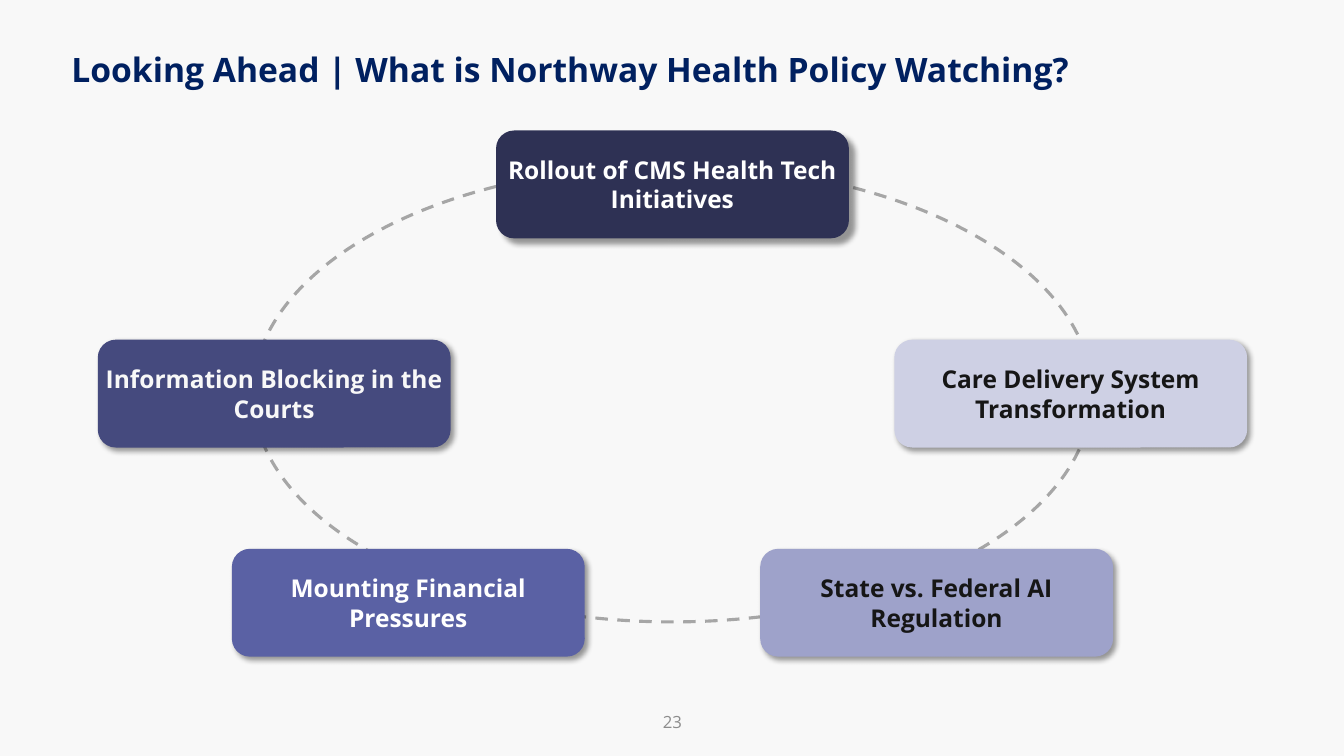
from lxml import etree
from pptx import Presentation
from pptx.dml.color import RGBColor
from pptx.enum.dml import MSO_LINE
from pptx.enum.shapes import MSO_SHAPE as SHAPE
from pptx.enum.text import MSO_ANCHOR as ANCHOR, PP_ALIGN as ALIGN
from pptx.oxml.ns import qn
from pptx.util import Inches, Pt

FONT = "Open Sans"
PAPER = RGBColor(0xF8, 0xF8, 0xF8)
NAVY = RGBColor(0x00, 0x20, 0x60)
GRAY = RGBColor(0x8C, 0x8C, 0x8C)
RING = RGBColor(0xA6, 0xA6, 0xA6)
WHITE = RGBColor(0xFF, 0xFF, 0xFF)
INK = RGBColor(0x16, 0x16, 0x16)
INDIGO_1 = RGBColor(0x2E, 0x31, 0x54)
INDIGO_2 = RGBColor(0x45, 0x4A, 0x7E)
INDIGO_3 = RGBColor(0x5A, 0x61, 0xA4)
INDIGO_4 = RGBColor(0x9E, 0xA2, 0xCA)
INDIGO_5 = RGBColor(0xCE, 0xD0, 0xE4)

CARD_W, CARD_H = 3.5, 1.07
ROW_STEP = 2.075

# Text, fill, text colour, offset from the ring's centre, row, shadow distance, space after
TOPICS = [
    ("Information Blocking in the Courts", INDIGO_2, PAPER, -3.95, 1, 3, 0),
    ("Rollout of CMS Health Tech Initiatives", INDIGO_1, WHITE, 0, 0, 6, 0),
    ("Mounting Financial Pressures", INDIGO_3, WHITE, -2.62, 2, 3, 0),
    ("State vs. Federal AI Regulation", INDIGO_4, INK, 2.62, 2, 3, 6),
    ("Care Delivery System Transformation", INDIGO_5, INK, 3.95, 1, 3, 6),
]


def write(tf, text, size, color, bold=False, align=ALIGN.LEFT):
    tf.word_wrap = True
    p = tf.paragraphs[0]
    p.alignment = align
    r = p.add_run()
    r.text = text
    r.font.name = FONT
    r.font.size = Pt(size)
    r.font.bold = bold
    r.font.color.rgb = color
    return p


def add_shadow(sp, distance):
    sp.shadow.inherit = False
    effects = sp.element.spPr.find(qn("a:effectLst"))
    shadow = etree.SubElement(
        effects, qn("a:outerShdw"), blurRad=str(Pt(4)), dist=str(Pt(distance)),
        dir=str(45 * 60000), algn="tl", rotWithShape="0")
    color = etree.SubElement(shadow, qn("a:srgbClr"), val="000000")
    etree.SubElement(color, qn("a:alpha"), val="40000")


def add_label(s, x, y, w, h, text, size, color, bold=False,
              align=ALIGN.LEFT, anchor=ANCHOR.TOP):
    tf = s.shapes.add_textbox(Inches(x), Inches(y), Inches(w), Inches(h)).text_frame
    tf.vertical_anchor = anchor
    write(tf, text, size, color, bold, align)


def add_card(s, x, y, text, fill, color, distance, space_after):
    sp = s.shapes.add_shape(SHAPE.ROUNDED_RECTANGLE, Inches(x), Inches(y),
                            Inches(CARD_W), Inches(CARD_H))
    sp.fill.solid()
    sp.fill.fore_color.rgb = fill
    sp.line.fill.background()
    add_shadow(sp, distance)
    tf = sp.text_frame
    tf.margin_left = tf.margin_right = 0
    tf.vertical_anchor = ANCHOR.MIDDLE
    p = write(tf, text, 17.5, color, True, ALIGN.CENTER)
    p.space_after = Pt(space_after)


def add_topic_ring(s, x, y, w, h):
    # Dashed ring
    ring = s.shapes.add_shape(SHAPE.OVAL, Inches(x), Inches(y), Inches(w), Inches(h))
    ring.shadow.inherit = False
    ring.fill.background()
    ring.line.color.rgb = RING
    ring.line.width = Pt(2.25)
    ring.line.dash_style = MSO_LINE.DASH

    # Cards in three rows, centred on the ring
    left = x + (w - CARD_W) / 2
    middle = y + (h - CARD_H) / 2
    for text, fill, color, offset, row, distance, space_after in TOPICS:
        add_card(s, left + offset, middle + (row - 1) * ROW_STEP,
                 text, fill, color, distance, space_after)


def main():
    prs = Presentation()
    prs.slide_width, prs.slide_height = Inches(13.33), Inches(7.5)
    s = prs.slides.add_slide(prs.slide_layouts[6])
    s.background.fill.solid()
    s.background.fill.fore_color.rgb = PAPER

    # Title and page number
    add_label(s, 0.61, 0.44, 12.59, 0.5,
              "Looking Ahead | What is Northway Health Policy Watching?",
              24, NAVY, bold=True)
    add_label(s, 5.17, 6.96, 3, 0.4, "23", 12, GRAY,
              align=ALIGN.CENTER, anchor=ANCHOR.MIDDLE)

    add_topic_ring(s, 2.51, 1.64, 8.32, 4.53)
    prs.save("out.pptx")


if __name__ == "__main__":
    main()
